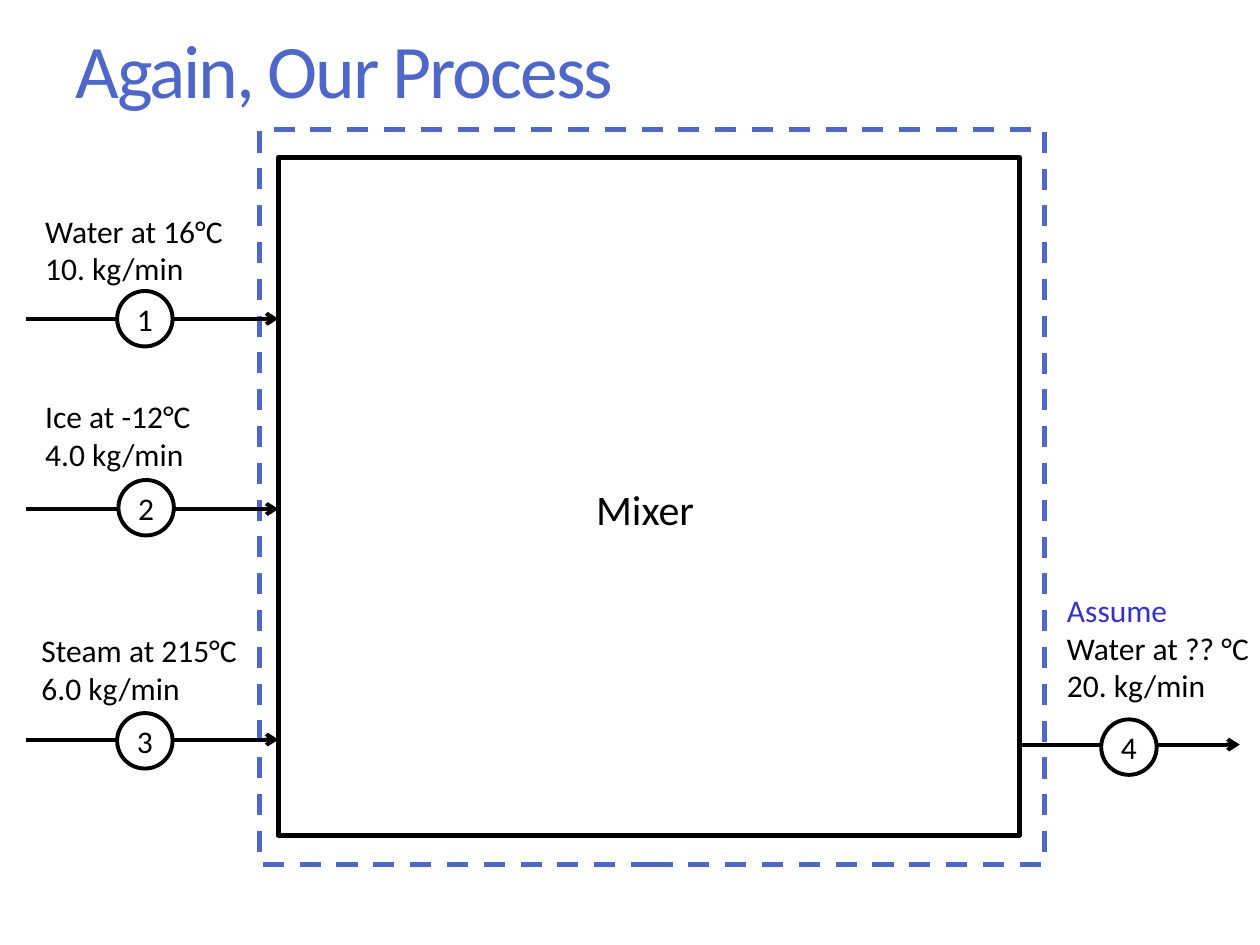
from lxml import etree
from pptx import Presentation
from pptx.dml.color import RGBColor
from pptx.enum import dml, shapes, text
from pptx.oxml.ns import qn
from pptx.util import Inches, Pt

BLUE = RGBColor(0x4E, 0x67, 0xC8)
INDIGO = RGBColor(0x33, 0x33, 0xCC)
BLACK = RGBColor(0, 0, 0)
WHITE = RGBColor(255, 255, 255)
FONT = "Calibri"
CIRCLE = 0.44


def add_run(p, content, size, color):
    r = p.add_run()
    r.text = content
    r.font.name = FONT
    r.font.size = Pt(size)
    r.font.color.rgb = color
    return r


def add_text(slide, box, lines, size, align=text.PP_ALIGN.LEFT):
    sp = slide.shapes.add_textbox(*map(Inches, box))
    tf = sp.text_frame
    tf.word_wrap = True
    for i, (content, color) in enumerate(lines):
        p = tf.add_paragraph() if i else tf.paragraphs[0]
        p.alignment = align
        add_run(p, content, size, color)
    return sp


def add_outline(slide, kind, box, color, width):
    sp = slide.shapes.add_shape(kind, *map(Inches, box))
    sp.shadow.inherit = False
    sp.fill.background()
    sp.line.color.rgb = color
    sp.line.width = Pt(width)
    return sp


def add_arrow(slide, start, end):
    cn = slide.shapes.add_connector(
        shapes.MSO_CONNECTOR.STRAIGHT, *map(Inches, start + end))
    cn.line.color.rgb = BLACK
    cn.line.width = Pt(2.25)
    etree.SubElement(cn.line._get_or_add_ln(), qn("a:tailEnd"), type="arrow")
    etree.SubElement(cn._element.spPr, qn("a:effectLst"))


def add_number(slide, left, top, number):
    sp = add_outline(slide, shapes.MSO_SHAPE.OVAL,
                     (left, top, CIRCLE, CIRCLE), BLACK, 2.25)
    sp.fill.solid()
    sp.fill.fore_color.rgb = WHITE
    tf = sp.text_frame
    tf.margin_left = tf.margin_right = tf.margin_top = tf.margin_bottom = 0
    tf.vertical_anchor = text.MSO_ANCHOR.MIDDLE
    p = tf.paragraphs[0]
    p.alignment = text.PP_ALIGN.CENTER
    add_run(p, str(number), 18, BLACK)


def add_title(slide, box):
    sp = add_text(slide, box, [("Again, Our Process", BLUE)], 43.2)
    sp.text_frame.vertical_anchor = text.MSO_ANCHOR.MIDDLE
    p = sp.text_frame.paragraphs[0]
    p.line_spacing = 0.9
    p.runs[0].font._element.set("spc", "-120")


def add_boundary(slide, box):
    sp = add_outline(slide, shapes.MSO_SHAPE.RECTANGLE, box, BLUE, 3)
    sp.line.dash_style = dml.MSO_LINE.DASH


def add_mixer(slide, box):
    add_outline(slide, shapes.MSO_SHAPE.RECTANGLE, box, BLACK, 3)
    left, top, width, height = box
    label = (left + width / 2 - 1.35, top + height / 2 - 0.15, 2.64, 0.51)
    add_text(slide, label, [("Mixer", BLACK)], 24, text.PP_ALIGN.CENTER)


def add_stream(slide, number, start, end, circle, label_box, lines):
    add_arrow(slide, start, end)
    add_number(slide, *circle, number)
    add_text(slide, label_box, lines, 18)


def main():
    prs = Presentation()
    prs.slide_width, prs.slide_height = Inches(10), Inches(7.5)
    slide = prs.slides.add_slide(prs.slide_layouts[6])

    add_title(slide, (0.5, 0.3, 9, 0.57))
    add_boundary(slide, (2.06, 1.03, 6.23, 5.83))
    mixer = (2.21, 1.25, 5.88, 5.38)
    add_mixer(slide, mixer)

    inlets = [
        (2.53, (0.93, 2.31), (0.26, 1.63), "Water at 16°C", "10. kg/min"),
        (4.04, (0.94, 3.81), (0.26, 3.1), "Ice at -12°C", "4.0 kg/min"),
        (5.87, (0.93, 5.66), (0.23, 4.96), "Steam at 215°C", "6.0 kg/min"),
    ]
    for number, (y, circle, label, feed, rate) in enumerate(inlets, 1):
        add_stream(slide, number, (0.21, y), (mixer[0], y), circle,
                   label + (1.79, 0.71), [(feed, BLACK), (rate, BLACK)])

    add_stream(slide, 4, (mixer[0] + mixer[2], 5.91), (9.84, 5.91),
               (8.74, 5.71), (8.37, 4.64, 1.74, 1.01),
               [("Assume", INDIGO), ("Water at ?? °C", BLACK),
                ("20. kg/min", BLACK)])

    prs.save("out.pptx")


if __name__ == "__main__":
    main()
